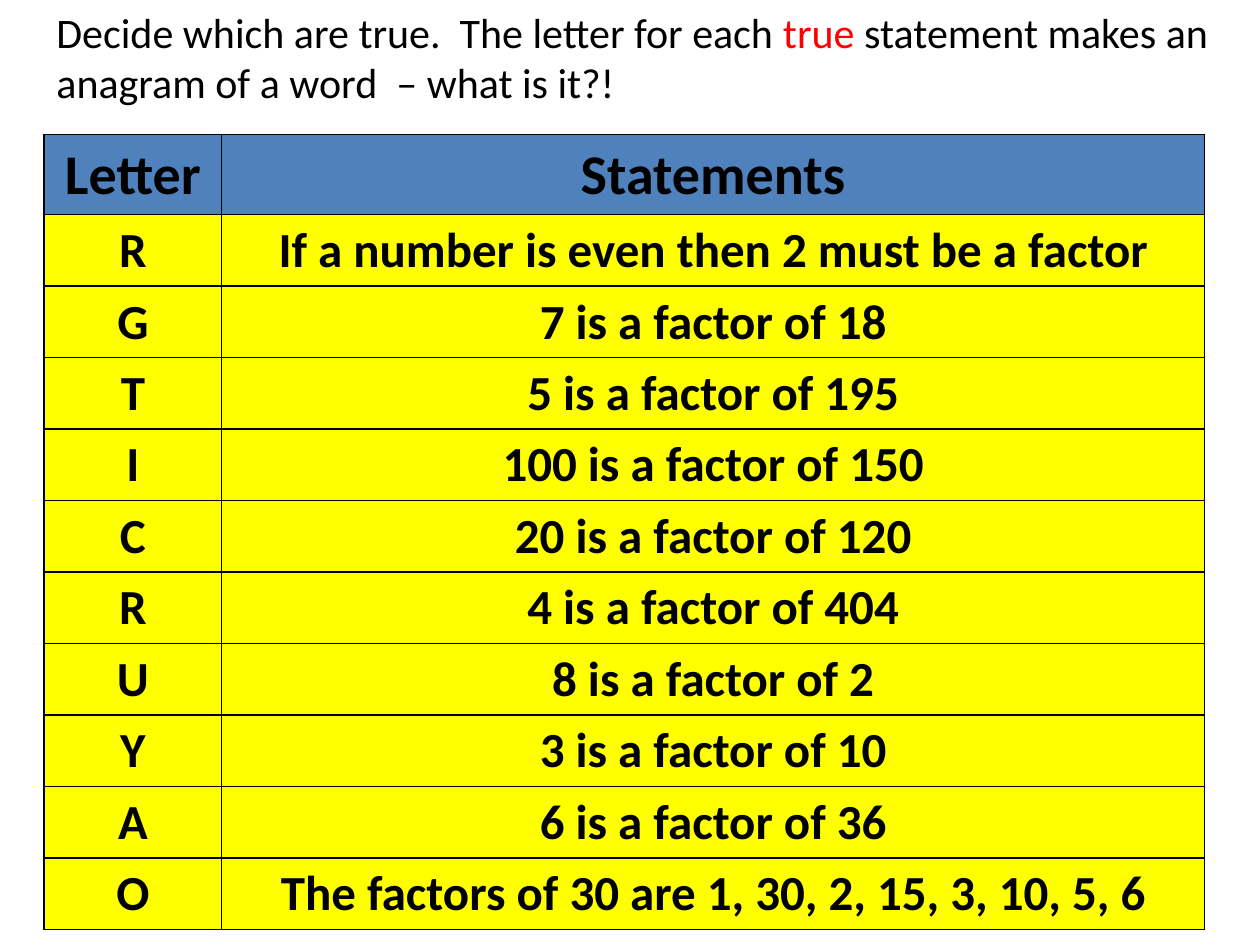
from lxml.etree import SubElement
from pptx import Presentation
from pptx.dml.color import RGBColor
from pptx.enum.text import MSO_ANCHOR, MSO_AUTO_SIZE, PP_ALIGN
from pptx.oxml.ns import qn
from pptx.util import Pt

COLORS = {"text": "000000", "accent": "FF0000", "header": "4F81BD",
          "body": "FFFF00", "border": "000000"}

INSTRUCTION = [
    ("Decide which are true.  The letter for each ", "text"),
    ("true", "accent"),
    (" statement makes an anagram of a word  – what is it?!", "text"),
]

HEADINGS = ("Letter", "Statements")
STATEMENTS = [
    ("R", "If a number is even then 2 must be a factor"),
    ("G", "7 is a factor of 18"),
    ("T", "5 is a factor of 195"),
    ("I", "100 is a factor of 150"),
    ("C", "20 is a factor of 120"),
    ("R", "4 is a factor of 404"),
    ("U", "8 is a factor of 2"),
    ("Y", "3 is a factor of 10"),
    ("A", "6 is a factor of 36"),
    ("O", "The factors of 30 are 1, 30, 2, 15, 3, 10, 5, 6"),
]

COLUMN_WIDTHS = (101.5, 561.6)
HEADER_STYLE = {"fill": "header", "size": 32, "height": 43.9}
BODY_STYLE = {"fill": "body", "size": 28, "height": 39.6}


def color(name):
    return RGBColor.from_string(COLORS[name])


def add_span(para, text, color_name="text", **formats):
    span = para.add_run()
    span.text = text
    span.font.color.rgb = color(color_name)
    for name, value in {"name": "Calibri", **formats}.items():
        setattr(span.font, name, value)


def add_instruction(page):
    box = page.shapes.add_textbox(Pt(25.2), Pt(0), Pt(674.6), Pt(65.5))
    frame = box.text_frame
    frame.word_wrap = True
    frame.auto_size = MSO_AUTO_SIZE.SHAPE_TO_FIT_TEXT
    for text, color_name in INSTRUCTION:
        add_span(frame.paragraphs[0], text, color_name, size=Pt(24))


def add_borders(cell):
    properties = cell._tc.get_or_add_tcPr()
    # Border lines come before the fill in the cell properties
    for position, side in enumerate(("a:lnL", "a:lnR", "a:lnT", "a:lnB")):
        line = SubElement(properties, qn(side), w=str(Pt(1)))
        fill = SubElement(line, qn("a:solidFill"))
        SubElement(fill, qn("a:srgbClr"), val=COLORS["border"])
        properties.insert(position, line)


def fill_cell(cell, text, style):
    cell.fill.solid()
    cell.fill.fore_color.rgb = color(style["fill"])
    cell.vertical_anchor = MSO_ANCHOR.TOP
    para = cell.text_frame.paragraphs[0]
    para.alignment = PP_ALIGN.CENTER
    add_span(para, text, size=Pt(style["size"]), bold=True)
    add_borders(cell)


def add_statement_table(page):
    rows = [(HEADINGS, HEADER_STYLE)] + [(row, BODY_STYLE) for row in STATEMENTS]
    height = sum(style["height"] for _, style in rows)
    table = page.shapes.add_table(len(rows), len(HEADINGS), Pt(25.2), Pt(77),
                                  Pt(sum(COLUMN_WIDTHS)), Pt(height)).table
    for column, width in zip(table.columns, COLUMN_WIDTHS):
        column.width = Pt(width)
    for row, (texts, style) in zip(table.rows, rows):
        row.height = Pt(style["height"])
        for cell, text in zip(row.cells, texts):
            fill_cell(cell, text, style)


def main():
    deck = Presentation()
    deck.slide_width, deck.slide_height = Pt(720), Pt(540)
    # Blank layout: the slide has no title
    page = deck.slides.add_slide(deck.slide_layouts[6])
    add_instruction(page)
    add_statement_table(page)
    deck.save("out.pptx")


if __name__ == "__main__":
    main()
